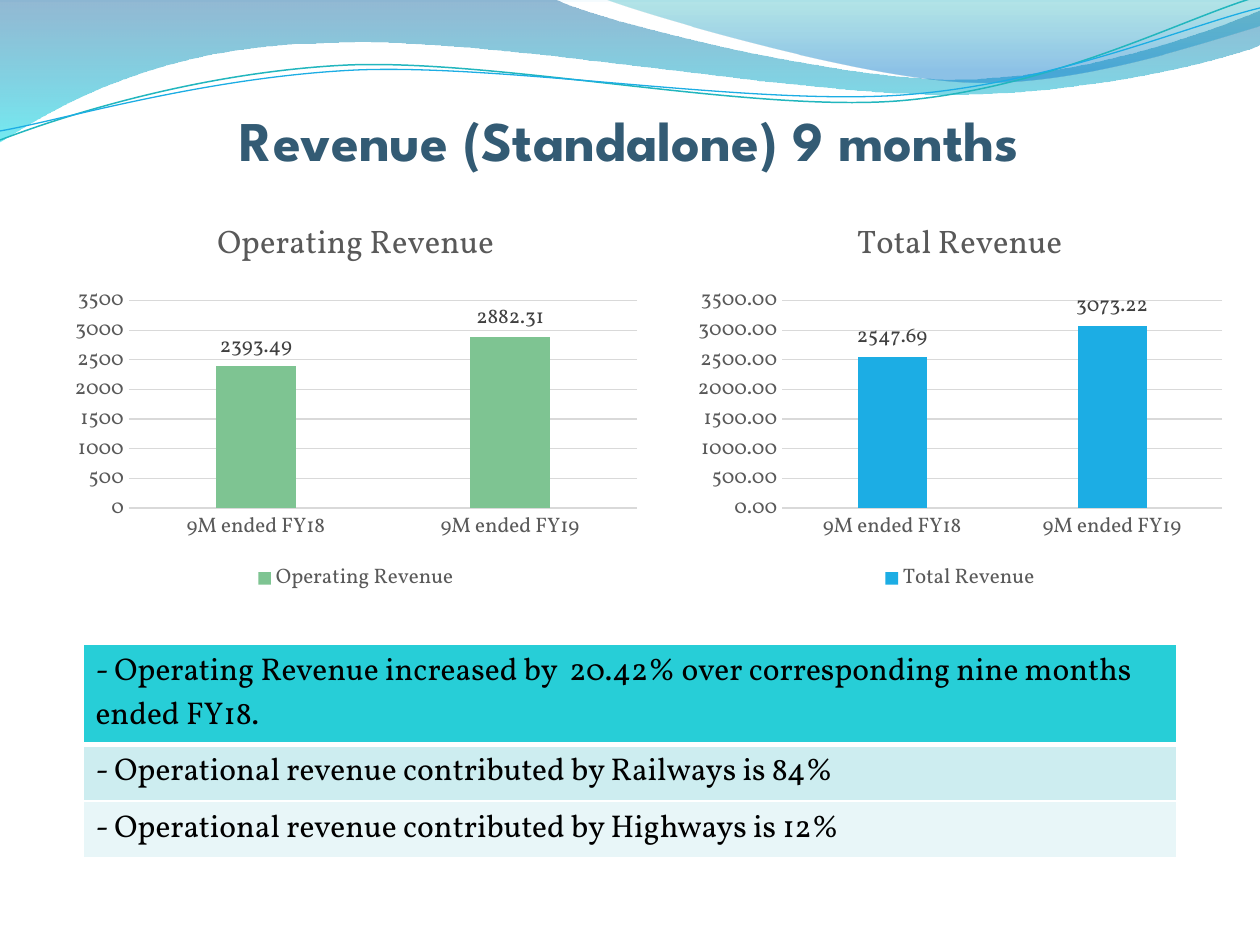
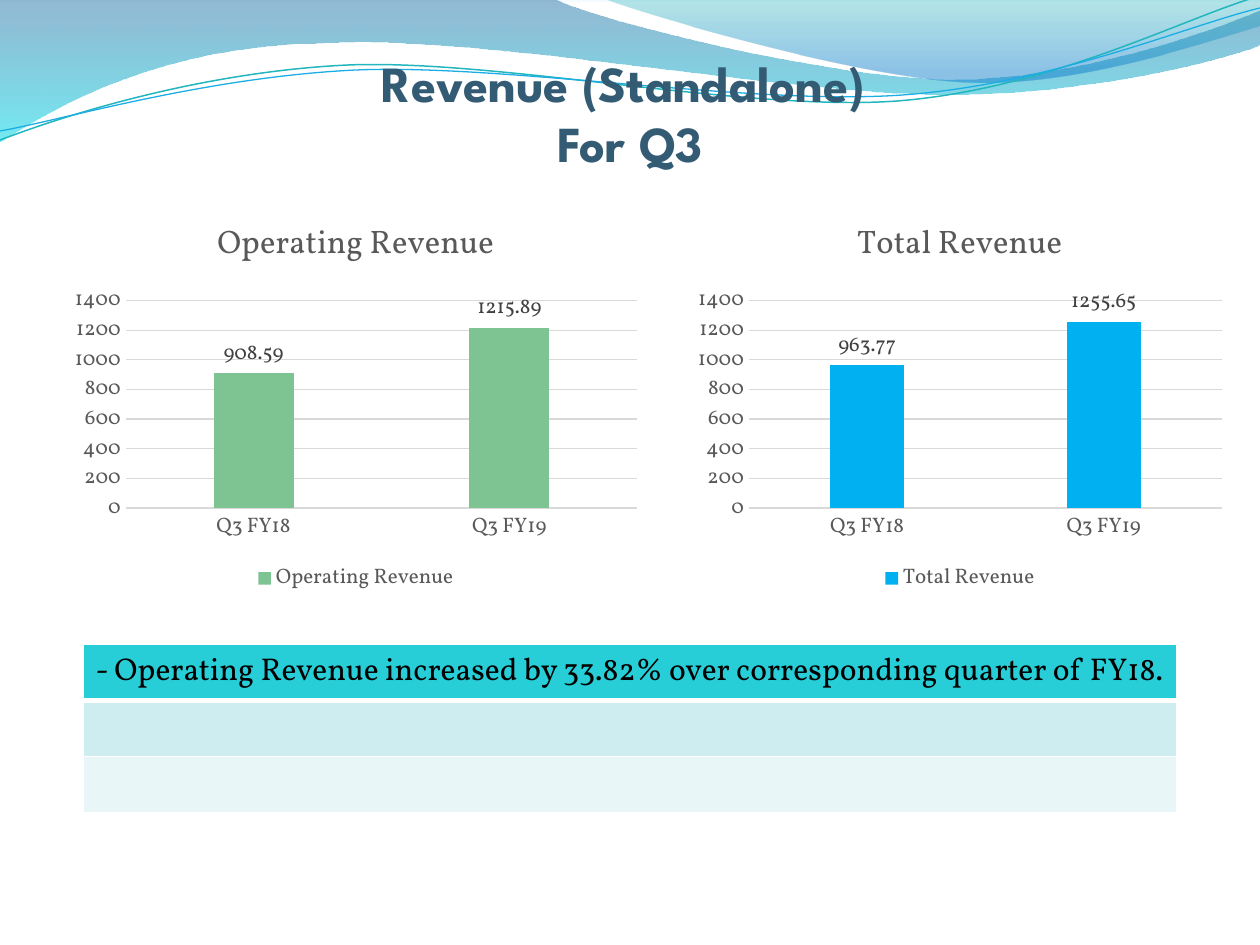
from lxml.etree import SubElement
from pptx import Presentation
from pptx.chart.data import CategoryChartData as ChartData
from pptx.dml.color import RGBColor as RGB
from pptx.enum.chart import XL_CHART_TYPE as KIND
from pptx.enum.chart import XL_LABEL_POSITION as SPOT
from pptx.enum.chart import XL_LEGEND_POSITION as SIDE
from pptx.enum.chart import XL_TICK_MARK as TICK
from pptx.enum.shapes import MSO_SHAPE as FORM
from pptx.enum.text import MSO_ANCHOR as ANCHOR
from pptx.enum.text import MSO_AUTO_SIZE as FIT
from pptx.enum.text import PP_ALIGN as ALIGN
from pptx.oxml.ns import qn
from pptx.util import Emu, Pt

PX = 914400 / 126
WIDE, HIGH = 1260, 945
HEAD, BODY = "League Spartan", "Vollkorn"
TITLE_ONLY = 5

INK = {
    "back": "F4FBFE", "white": "FFFFFF", "black": "000000",
    "title": "335B74", "text": "595959", "label": "404040", "grid": "D9D9D9",
    "green": "7EC492", "blue": "1CADE4", "sky": "00B0F0", "teal": "22B6BE",
    "row1": "27CED7", "row2": "CDEDF0", "row3": "E8F6F8",
    "navy": "10639E", "aqua": "00DBE7", "sea": "09AAB3", "azure": "0578CB",
}

# Each outline is a start point, then steps: one point is a line, three a curve.
# Gradient stops are position, colour and opacity in percent.
BANDS = [
    ([[(0, 0)], [(554, -1)],
      [(598, 21), (835, 79), (955, 79)],
      [(1075, 79), (1207, 33), (1260, 11)],
      [(1261, 45)],
      [(1239, 55), (1095, 96), (940, 94)],
      [(784, 94), (480, 35), (324, 43)],
      [(163, 45), (58, 105), (-1, 142)]],
     [(0, "navy", 45), (100, "aqua", 55)]),
    ([[(604, -1)],
      [(641, 14), (859, 78), (968, 82)],
      [(1077, 87), (1211, 40), (1260, 26)],
      [(1260, 0)]],
     [(0, "sea", 30), (80, "azure", 45)]),
]
WAVES = [
    ([[(0, 140)],
      [(60, 117), (198, 72), (348, 65)],
      [(498, 59), (746, 112), (897, 101)],
      [(1050, 89), (1182, 19), (1256, -3)]], "teal", 0.85),
    ([[(0, 131)],
      [(59, 121), (205, 77), (357, 70)],
      [(507, 64), (752, 106), (903, 95)],
      [(1053, 84), (1186, 26), (1260, 8)]], "blue", 0.75),
]


def px(num):
    return Emu(round(num * PX))


def ink(name):
    return RGB.from_string(INK[name])


def paint(fill, name):
    fill.solid()
    fill.fore_color.rgb = ink(name)


def style(font, color, **look):
    font.color.rgb = ink(color)
    for key, val in look.items():
        setattr(font, key, val)


def outline(slide, steps, close):
    """Build a freeform, then join each run of three points into a curve."""
    dots = [(px(x), px(y)) for step in steps for x, y in step]
    pen = slide.shapes.build_freeform(*dots[0], scale=1.0)
    pen.add_line_segments(dots[1:], close=close)
    shape = pen.convert_to_shape()
    shape.shadow.inherit = False
    lines = iter(shape._element.spPr.findall(".//" + qn("a:lnTo")))
    for step in steps[1:]:
        group = [next(lines) for _ in step]
        if len(group) == 3:
            curve = group[0].makeelement(qn("a:cubicBezTo"))
            group[0].addprevious(curve)
            for line in group:
                curve.append(line[0])
                line.getparent().remove(line)
    return shape


def add_sheet(slide):
    sheet = slide.shapes.add_shape(FORM.RECTANGLE, 0, px(2), px(WIDE), px(HIGH))
    sheet.shadow.inherit = False
    sheet.line.fill.background()
    paint(sheet.fill, "white")
    return sheet


def add_band(slide, steps, stops):
    shape = outline(slide, steps, True)
    shape.line.fill.background()
    shape.fill.gradient()
    shape.fill.gradient_angle = 270
    for stop, (place, color, _) in zip(shape.fill.gradient_stops, stops):
        stop.position = place / 100
        stop.color.rgb = ink(color)
    tints = shape._element.spPr.findall(".//" + qn("a:gs") + "/" + qn("a:srgbClr"))
    for tint, (_, _, alpha) in zip(tints, stops):
        SubElement(tint, qn("a:alpha"), val=str(alpha * 1000))
    return shape


def add_wave(slide, steps, color, width):
    shape = outline(slide, steps, False)
    shape.fill.background()
    shape.line.color.rgb = ink(color)
    shape.line.width = Pt(width)
    return shape


def dress(layout, slide):
    """Draw the sheet, bands and waves once and keep them in the layout."""
    paint(layout.background.fill, "back")
    parts = [add_sheet(slide)]
    parts += [add_band(slide, *band) for band in BANDS]
    parts += [add_wave(slide, *wave) for wave in WAVES]
    for i, part in enumerate(parts):
        part._element.nvSpPr.cNvPr.set("id", str(100 + i))
        layout.shapes._spTree.insert(2 + i, part._element)


def set_title(slide, text, size):
    title = slide.shapes.title
    for key, num in dict(left=63, top=85, width=1134, height=88).items():
        setattr(title, key, px(num))
    frame = title.text_frame
    look = dict(margin_left=0, margin_right=0, margin_top=px(6),
                margin_bottom=0, word_wrap=True, auto_size=FIT.NONE,
                vertical_anchor=ANCHOR.BOTTOM)
    for key, val in look.items():
        setattr(frame, key, val)
    frame.text = text
    para = frame.paragraphs[0]
    para.alignment = ALIGN.CENTER
    for run in para.runs:
        style(run.font, "title", name=HEAD, size=Pt(size), bold=True)


def add_bars(slide, left, width, name, cats, vals, color, top, step, form):
    data = ChartData(number_format=form)
    data.categories = cats
    data.add_series(name, vals)
    chart = slide.shapes.add_chart(
        KIND.COLUMN_CLUSTERED, px(left), px(198), px(width), px(400), data).chart
    style(chart.font, "text", name=BODY, size=Pt(12))

    chart.has_title = True
    chart.chart_title.include_in_layout = False
    frame = chart.chart_title.text_frame
    frame.text = name
    style(frame.paragraphs[0].runs[0].font, "text",
          name=BODY, size=Pt(18.6), bold=False)
    chart.has_legend = True
    chart.legend.position = SIDE.BOTTOM
    chart.legend.include_in_layout = False
    style(chart.legend.font, "text", name=BODY, size=Pt(12))

    for axis in (chart.category_axis, chart.value_axis):
        axis.major_tick_mark = axis.minor_tick_mark = TICK.NONE
        style(axis.tick_labels.font, "text", name=BODY, size=Pt(12))
    scale = chart.value_axis
    scale.minimum_scale, scale.maximum_scale, scale.major_unit = 0, top, step
    scale.tick_labels.number_format = form
    scale.tick_labels.number_format_is_linked = False
    scale.format.line.fill.background()
    for line in (chart.category_axis.format.line,
                 scale.major_gridlines.format.line):
        line.color.rgb = ink("grid")
        line.width = Pt(0.75)

    plot = chart.plots[0]
    plot.gap_width = 219
    plot.vary_by_categories = False
    paint(plot.series[0].format.fill, color)
    plot.has_data_labels = True
    marks = plot.data_labels
    look = dict(show_value=True, position=SPOT.OUTSIDE_END,
                number_format=form, number_format_is_linked=False)
    for key, val in look.items():
        setattr(marks, key, val)
    style(marks.font, "label", name=BODY, size=Pt(12))


def edge(cell, side, width):
    line = SubElement(cell._tc.get_or_add_tcPr(), qn("a:ln" + side),
                      w=str(Pt(width)))
    fill = SubElement(line, qn("a:solidFill"))
    SubElement(fill, qn("a:srgbClr"), val=INK["white"])


def add_notes(slide, notes):
    """Add the three-row table of remarks."""
    high = 56
    table = slide.shapes.add_table(
        3, 1, px(83), px(644), px(1094), px(3 * high)).table
    table.first_row = table.horz_banding = False
    for i, note in enumerate(notes):
        table.rows[i].height = px(high)
        cell = table.cell(i, 0)
        thick = {0: "B", 1: "T"}.get(i)
        for side in "LRTB":
            edge(cell, side, 3 if side == thick else 1)
        paint(cell.fill, f"row{i + 1}")
        if note:
            cell.text = note
            style(cell.text_frame.paragraphs[0].runs[0].font, "black",
                  name=BODY, size=Pt(18), bold=False)


def add_page(slide, title, size, cats, sales, total, color, top, step, form, notes):
    set_title(slide, title, size)
    add_bars(slide, 63, 586, "Operating Revenue", cats, sales,
             "green", top, step, "General")
    add_bars(slide, 687, 546, "Total Revenue", cats, total,
             color, top, step, form)
    add_notes(slide, notes)


def main():
    deck = Presentation()
    deck.slide_width, deck.slide_height = px(WIDE), px(HIGH)
    layout = deck.slide_layouts[TITLE_ONLY]
    first, second = (deck.slides.add_slide(layout) for _ in range(2))
    dress(layout, first)
    add_page(
        first, "Revenue (Standalone) 9 months", 32,
        ["9M ended FY18", "9M ended FY19"],
        [2393.49, 2882.31], [2547.69, 3073.22], "blue", 3500, 500, "0.00",
        ["- Operating Revenue increased by  20.42% over corresponding "
         "nine months ended FY18.",
         "- Operational revenue contributed by Railways is 84%",
         "- Operational revenue contributed by Highways is 12%"])
    add_page(
        second, "Revenue (Standalone) \vFor Q3", 28.8,
        ["Q3 FY18", "Q3 FY19"],
        [908.59, 1215.89], [963.77, 1255.65], "sky", 1400, 200, "General",
        ["- Operating Revenue increased by 33.82% over corresponding "
         "quarter of FY18.", "", ""])
    deck.save("out.pptx")


if __name__ == "__main__":
    main()
